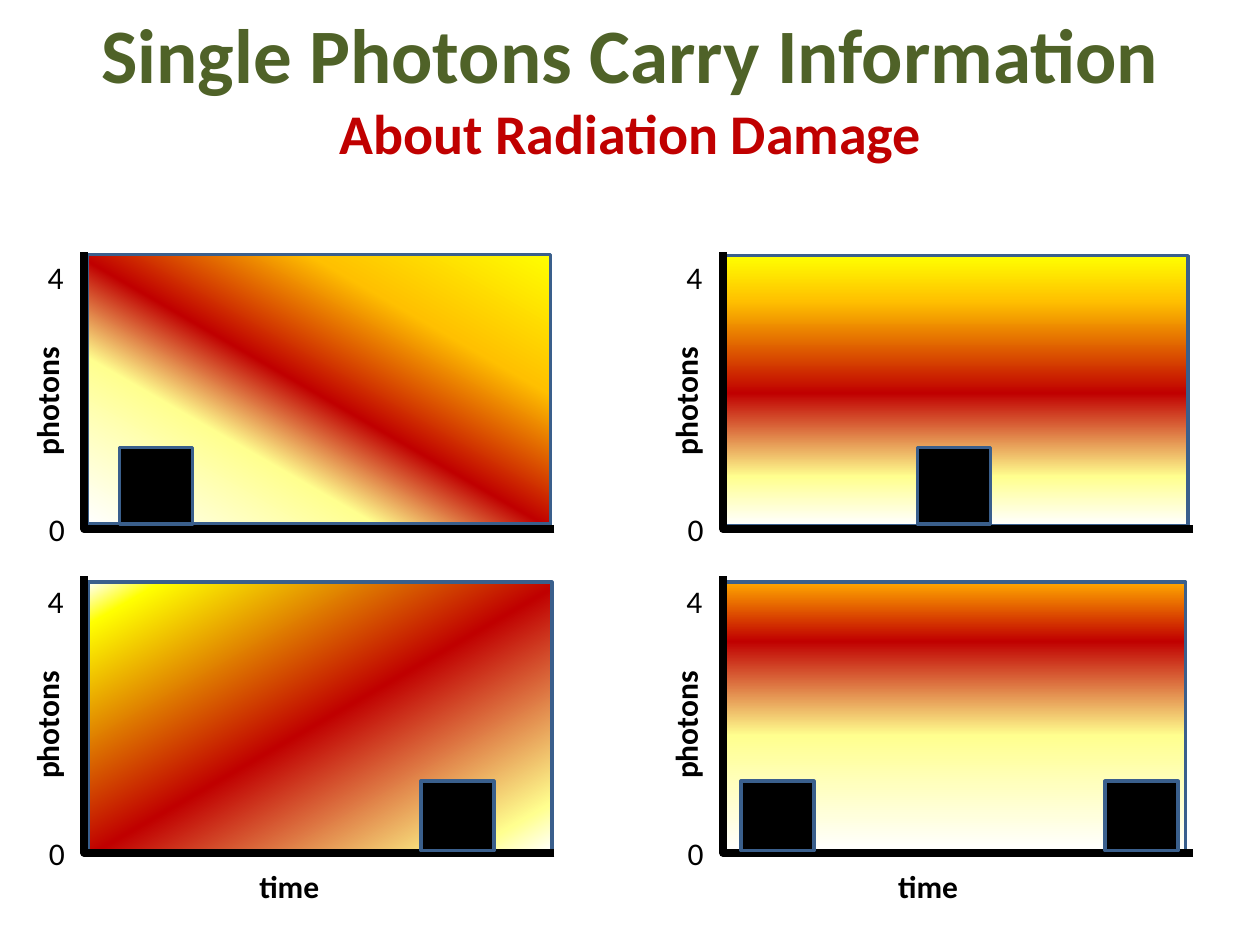
import copy

import pptx
import pptx.dml.color
import pptx.enum.shapes
import pptx.enum.text
import pptx.util

Inches = pptx.util.Inches
Pt = pptx.util.Pt
RGBColor = pptx.dml.color.RGBColor
RECTANGLE = pptx.enum.shapes.MSO_SHAPE.RECTANGLE

BLACK = RGBColor(0x00, 0x00, 0x00)
WHITE = RGBColor(0xFF, 0xFF, 0xFF)
BLUE = RGBColor(0x3A, 0x5F, 0x8C)
GREEN = RGBColor(0x4F, 0x62, 0x28)
RED = RGBColor(0xC0, 0x00, 0x00)
YELLOW = RGBColor(0xFF, 0xFF, 0x00)
AMBER = RGBColor(0xFF, 0xC0, 0x00)
ORANGE = RGBColor(0xFF, 0xA7, 0x00)
CREAM = RGBColor(0xFF, 0xFF, 0x8F)

FONT = "Calibri"
AXIS_WIDTH, AXIS_HEIGHT = 3.73, 2.2
COLUMNS = (0.67, 5.74)
ROWS = (2, 4.57)
BAR_SIZES = (0.61, 0.55)
BAR_BOTTOMS = (2.16, 2.18)

PANELS = [
    {"row": 0, "column": 0, "offset": (0.02, 0.02), "angle": 120, "bars": [0.28],
     "stops": [(0, YELLOW), (26, AMBER), (51, RED), (69, CREAM), (100, WHITE)]},
    {"row": 1, "column": 0, "offset": (0.03, 0.05), "angle": 60, "bars": [2.67],
     "stops": [(0, WHITE), (8, YELLOW), (51, RED), (91, CREAM), (100, WHITE)]},
    {"row": 0, "column": 1, "offset": (0.01, 0.03), "angle": 90, "bars": [1.54],
     "stops": [(0, YELLOW), (17, AMBER), (51, RED), (82, CREAM), (100, WHITE)]},
    {"row": 1, "column": 1, "offset": (-0.01, 0.05), "angle": 90, "bars": [0.14, 3.03],
     "stops": [(0, ORANGE), (22, RED), (57, CREAM), (100, WHITE)]},
]


def style_span(span, size, color, bold):
    span.font.name = FONT
    span.font.size = Pt(size)
    span.font.bold = bold
    span.font.color.rgb = color


def add_rectangle(page, left, top, width, height):
    box = page.shapes.add_shape(
        RECTANGLE, Inches(left), Inches(top), Inches(width), Inches(height))
    box.shadow.inherit = False
    box.line.color.rgb = BLUE
    box.line.width = Pt(2)
    return box


def fill_gradient(box, stops, angle):
    box.fill.gradient()
    box.fill.gradient_angle = 360 - angle
    stop_list = box.fill._fill._gradFill.gsLst
    while len(stop_list) < len(stops):
        stop_list.append(copy.deepcopy(stop_list[-1]))
    for stop, (percent, color) in zip(box.fill.gradient_stops, stops):
        stop.color.rgb = color
        stop.position = percent / 100


def add_label(page, text, left, top, width, bold=False, rotation=0):
    box = page.shapes.add_textbox(
        Inches(left), Inches(top), Inches(width), Inches(0.4))
    box.rotation = rotation
    frame = box.text_frame
    frame.word_wrap = bold
    frame.auto_size = pptx.enum.text.MSO_AUTO_SIZE.SHAPE_TO_FIT_TEXT
    frame.text = text
    style_span(frame.paragraphs[0].runs[0], 18, BLACK, bold)


def add_axes(page, left, top):
    right, bottom = left + AXIS_WIDTH, top + AXIS_HEIGHT
    builder = page.shapes.build_freeform(Inches(right), Inches(bottom))
    builder.add_line_segments(
        [(Inches(left), Inches(bottom)), (Inches(left), Inches(top))], close=False)
    axes = builder.convert_to_shape()
    axes.shadow.inherit = False
    axes.fill.background()
    axes.line.color.rgb = BLACK
    axes.line.width = Pt(4.5)


def add_panel(page, panel):
    row = panel["row"]
    left, top = COLUMNS[panel["column"]], ROWS[row]
    shift_x, shift_y = panel["offset"]
    plot = add_rectangle(page, left + shift_x, top + shift_y, 3.68, 2.14)
    fill_gradient(plot, panel["stops"], panel["angle"])
    add_axes(page, left, top)
    add_label(page, "photons", left - 1.12, top + 0.69, 1.64, True, 270)
    add_label(page, "0", left - 0.38, top + 2, 0.34)
    add_label(page, "4", left - 0.39, top, 0.34)
    if row == len(ROWS) - 1:
        add_label(page, "time", left + 1.29, top + 2.26, 1.64, True)
    height = BAR_SIZES[row]
    for bar_left in panel["bars"]:
        bar = add_rectangle(
            page, left + bar_left, top + BAR_BOTTOMS[row] - height, 0.58, height)
        bar.fill.solid()
        bar.fill.fore_color.rgb = BLACK


def add_title(page, left, top, width, height):
    box = page.shapes.add_textbox(
        Inches(left), Inches(top), Inches(width), Inches(height))
    frame = box.text_frame
    frame.word_wrap = False
    frame.auto_size = pptx.enum.text.MSO_AUTO_SIZE.SHAPE_TO_FIT_TEXT
    frame.text = "Single Photons Carry Information\nAbout Radiation Damage"
    for para, size, color in zip(frame.paragraphs, (44, 32), (GREEN, RED)):
        para.alignment = pptx.enum.text.PP_ALIGN.CENTER
        style_span(para.runs[0], size, color, True)


def main():
    deck = pptx.Presentation()
    deck.slide_width = Inches(10)
    deck.slide_height = Inches(7.5)
    page = deck.slides.add_slide(deck.slide_layouts[6])
    for panel in PANELS:
        add_panel(page, panel)
    add_title(page, -0.02, 0, 10.05, 1.38)
    deck.save("out.pptx")


if __name__ == "__main__":
    main()
